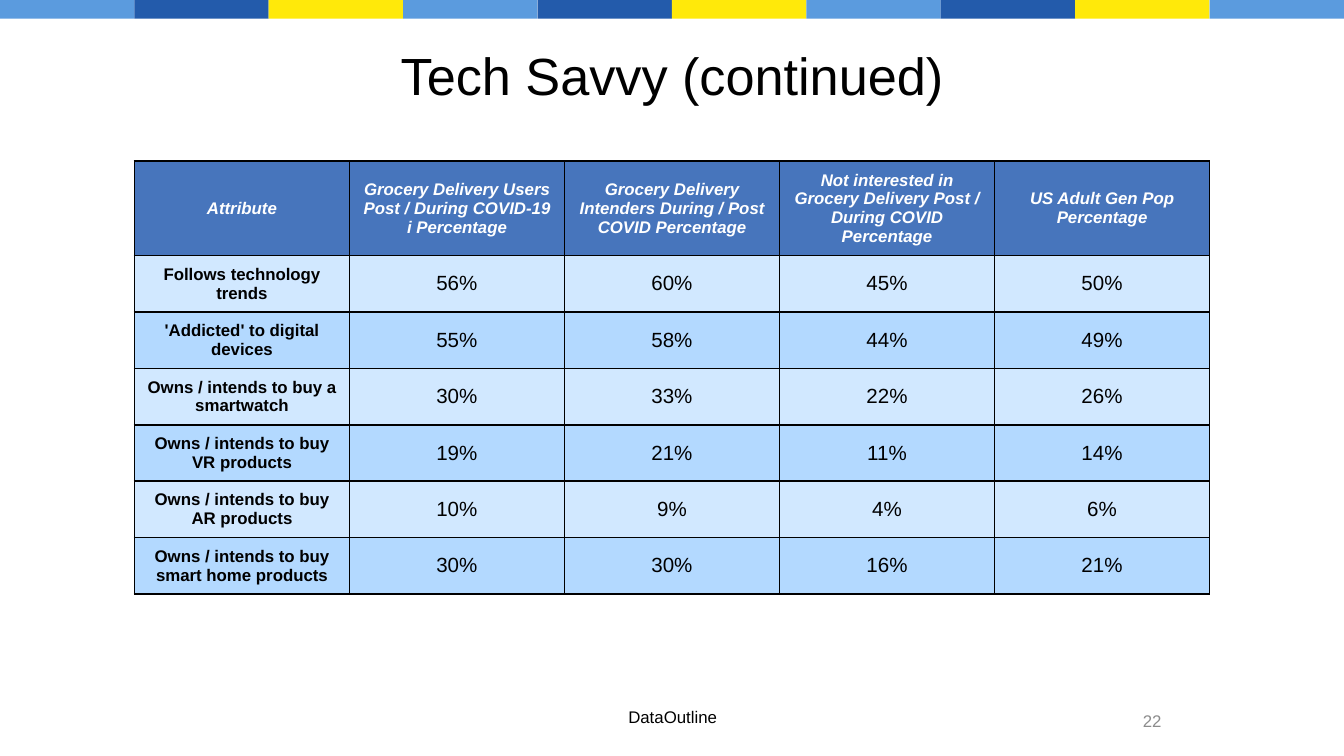
"""Build the Tech Savvy slide with its grocery delivery comparison table."""
from lxml import etree
from pptx import Presentation
from pptx.dml.color import RGBColor
from pptx.enum import shapes, text
from pptx.oxml import ns
from pptx.util import Inches, Pt

COLORS = {
    "sky": "5B9BDE", "navy": "235BAB", "yellow": "FFE90A",
    "header": "4775BC", "light": "D1E8FF", "medium": "B3D9FF",
    "black": "000000", "white": "FFFFFF", "gray": "8C8C8C",
}
STRIPES = ["sky", "navy", "yellow"]
STRIPE_COUNT = 10
LABELS = [
    ("Tech Savvy (continued)", (0.5, 0.23, 9, 0.65), 28, "black", "CENTER"),
    ("DataOutline", (4.23, 5.21, 1.55, 0.25), 9, "black", "CENTER"),
    ("22", (7.46, 5.21, 1.28, 0.3), 9, "gray", "RIGHT"),
]
ROWS = [
    ("Attribute",
     "Grocery Delivery Users Post / During COVID-19 i Percentage",
     "Grocery Delivery Intenders During / Post COVID Percentage",
     "Not interested in Grocery Delivery Post / During COVID Percentage",
     "US Adult Gen Pop Percentage"),
    ("Follows technology trends", "56%", "60%", "45%", "50%"),
    ("'Addicted' to digital devices", "55%", "58%", "44%", "49%"),
    ("Owns / intends to buy a smartwatch", "30%", "33%", "22%", "26%"),
    ("Owns / intends to buy VR products", "19%", "21%", "11%", "14%"),
    ("Owns / intends to buy AR products", "10%", "9%", "4%", "6%"),
    ("Owns / intends to buy smart home products", "30%", "30%", "16%", "21%"),
]
SLIDE_WIDTH = Inches(10)
SLIDE_HEIGHT = SLIDE_WIDTH * 9 // 16
HEADER_HEIGHT, ROW_HEIGHT = 0.7, 0.42


def rgb(name):
    return RGBColor.from_string(COLORS[name])


def style(paragraph, size, color, alignment, bold=False, italic=False):
    paragraph.alignment = alignment
    font = paragraph.font
    font.name, font.size = "Arial", Pt(size)
    font.bold, font.italic = bold, italic
    font.color.rgb = rgb(color)


def add_stripe(slide, index, width):
    stripe = slide.shapes.add_shape(
        shapes.MSO_SHAPE.RECTANGLE, index * width, 0, width, Inches(0.14))
    stripe.shadow.inherit = False
    stripe.fill.solid()
    stripe.fill.fore_color.rgb = rgb(STRIPES[index % len(STRIPES)])
    stripe.line.fill.background()


def add_label(slide, content, box, size, color, alignment):
    frame = slide.shapes.add_textbox(*map(Inches, box)).text_frame
    frame.word_wrap = True
    frame.vertical_anchor = text.MSO_ANCHOR.MIDDLE
    frame.text = content
    style(frame.paragraphs[0], size, color, text.PP_ALIGN[alignment])


def add_borders(cell):
    properties = cell._tc.get_or_add_tcPr()
    for side in ("lnL", "lnR", "lnT", "lnB"):
        line = etree.SubElement(properties, ns.qn(f"a:{side}"), w=str(Pt(1)))
        fill = etree.SubElement(line, ns.qn("a:solidFill"))
        etree.SubElement(fill, ns.qn("a:srgbClr"), val=COLORS["black"])


def fill_cell(cell, content, row, column):
    header, label = row == 0, column == 0
    cell.text = content
    cell.vertical_anchor = text.MSO_ANCHOR.MIDDLE
    cell.margin_left = cell.margin_right = Inches(0.08)
    cell.margin_top = cell.margin_bottom = Inches(0.05)
    add_borders(cell)
    cell.fill.solid()
    cell.fill.fore_color.rgb = rgb("header" if header else "light" if row % 2 else "medium")
    style(cell.text_frame.paragraphs[0], 9 if header or label else 11,
          "white" if header else "black", text.PP_ALIGN.CENTER,
          bold=header or label, italic=header)


def add_comparison(slide):
    height = HEADER_HEIGHT + ROW_HEIGHT * (len(ROWS) - 1)
    table = slide.shapes.add_table(
        len(ROWS), len(ROWS[0]), Inches(1), Inches(1.2), Inches(8), Inches(height)).table
    table.horz_banding = False
    for row, values in enumerate(ROWS):
        table.rows[row].height = Inches(ROW_HEIGHT if row else HEADER_HEIGHT)
        for column, value in enumerate(values):
            fill_cell(table.cell(row, column), value, row, column)


def main():
    presentation = Presentation()
    presentation.slide_width, presentation.slide_height = SLIDE_WIDTH, SLIDE_HEIGHT
    slide = presentation.slides.add_slide(presentation.slide_layouts[6])
    for index in range(STRIPE_COUNT):
        add_stripe(slide, index, SLIDE_WIDTH // STRIPE_COUNT)
    for label in LABELS:
        add_label(slide, *label)
    add_comparison(slide)
    presentation.save("out.pptx")


if __name__ == "__main__":
    main()
